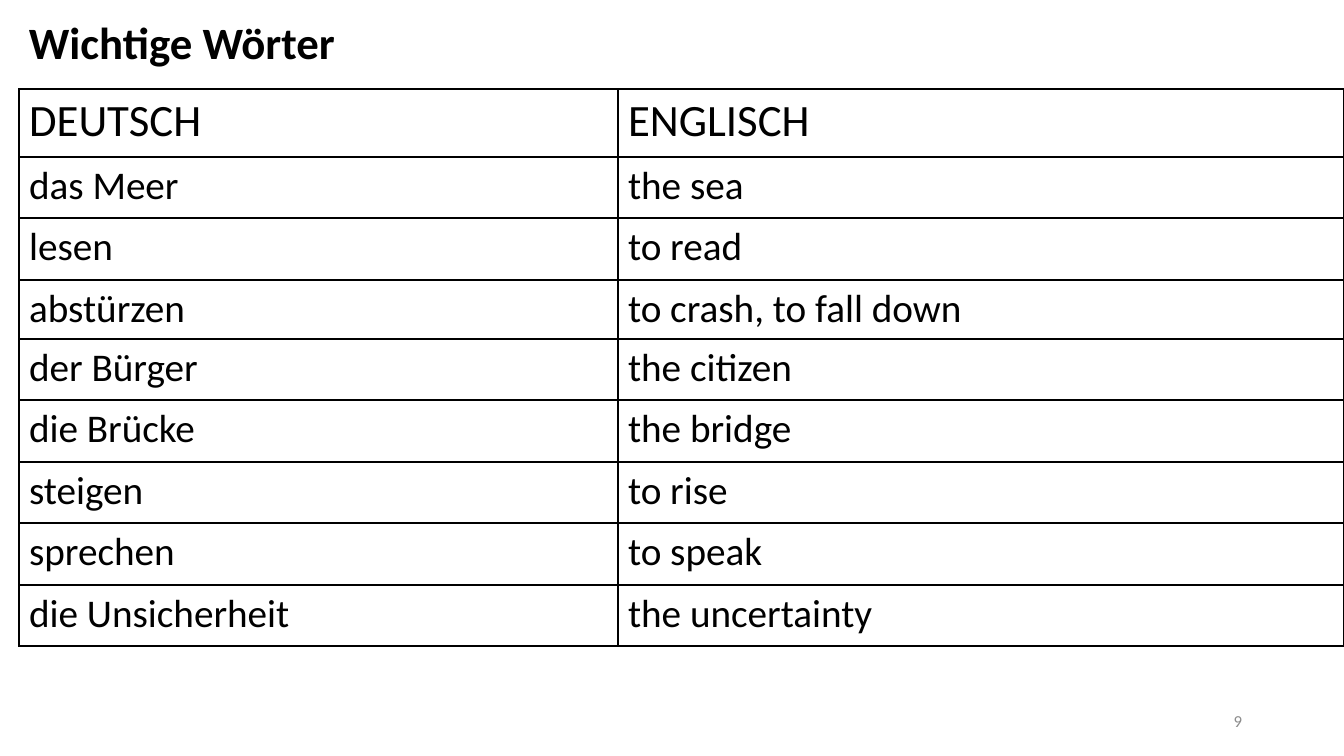
from lxml import etree
from pptx import Presentation
from pptx.dml.color import RGBColor
from pptx.enum.text import MSO_ANCHOR, PP_ALIGN
from pptx.oxml.ns import qn
from pptx.util import Pt

TOP, MID = MSO_ANCHOR.TOP, MSO_ANCHOR.MIDDLE
LEFT, RIGHT = PP_ALIGN.LEFT, PP_ALIGN.RIGHT
SCALE = 914400 / 100.8
BLACK, GREY, WHITE = "000000", "8C8C8C", "FFFFFF"


def px(*nums):
    return [round(n * SCALE) for n in nums]


def write(frame, text, size, color=BLACK, bold=False, align=LEFT):
    para = frame.paragraphs[0]
    para.alignment = align
    run = para.add_run()
    run.text = text
    run.font.name = "Calibri"
    run.font.size = Pt(size)
    run.font.bold = bold
    run.font.color.rgb = RGBColor.from_string(color)


deck = Presentation()
deck.slide_width, deck.slide_height = px(1344, 756)
slide = deck.slides.add_slide(deck.slide_layouts[6])

words = [
    ("DEUTSCH", "ENGLISCH"),
    ("das Meer", "the sea"),
    ("lesen", "to read"),
    ("abstürzen", "to crash, to fall down"),
    ("der Bürger", "the citizen"),
    ("die Brücke", "the bridge"),
    ("steigen", "to rise"),
    ("sprechen", "to speak"),
    ("die Unsicherheit", "the uncertainty"),
]
widths = [599, 726]
heights = [68, 61, 62, 59, 61, 62, 61, 62, 61]

frame = slide.shapes.add_table(
    len(words), len(widths), *px(19, 89, sum(widths), sum(heights)))
table = frame.table
table.first_row = table.horz_banding = False
for col, width in zip(table.columns, px(*widths)):
    col.width = width
for row, height in zip(table.rows, px(*heights)):
    row.height = height

for r, pair in enumerate(words):
    for c, word in enumerate(pair):
        cell = table.cell(r, c)
        write(cell.text_frame, word, 28 if r else 32)
        props = cell._tc.get_or_add_tcPr()
        for side in ("lnL", "lnR", "lnT", "lnB"):
            line = etree.SubElement(props, qn("a:" + side), w="12700")
            fill = etree.SubElement(line, qn("a:solidFill"))
            etree.SubElement(fill, qn("a:srgbClr"), val=BLACK)
        cell.fill.solid()
        cell.fill.fore_color.rgb = RGBColor.from_string(WHITE)

labels = [
    ((19, 10, 1310, 64), TOP, ("Wichtige Wörter", 32, BLACK, True, LEFT)),
    ((950, 701, 302, 40), MID, ("9", 12, GREY, False, RIGHT)),
]
for place, anchor, style in labels:
    box = slide.shapes.add_textbox(*px(*place)).text_frame
    box.word_wrap = True
    box.vertical_anchor = anchor
    write(box, *style)

deck.save("out.pptx")
